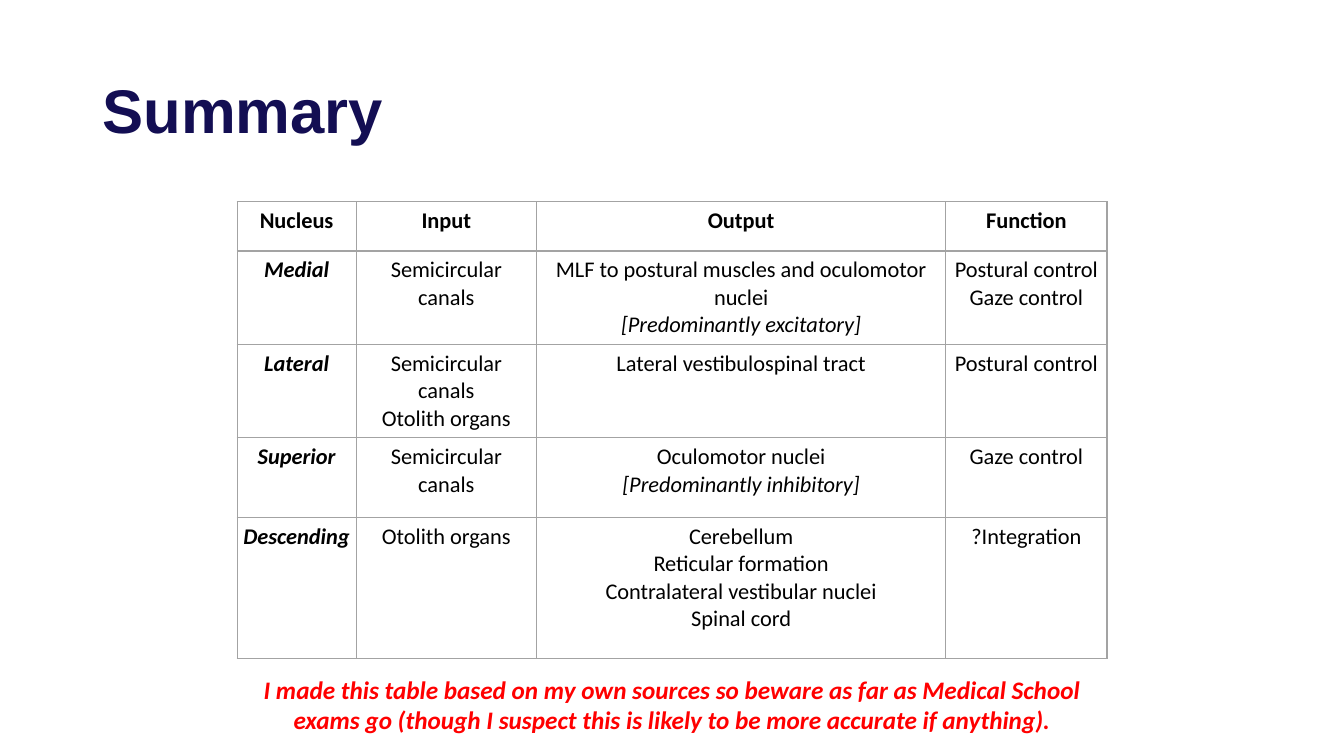
import pptx
import pptx.dml.color
import pptx.enum.text
import pptx.oxml
import pptx.oxml.ns
import pptx.util
from pptx.util import Pt

ALIGN = pptx.enum.text.PP_ALIGN
LEFT, WIDTH = 169.4, 621.4
CELL_MARGIN = 4
COLUMN_WIDTHS = [85, 128.9, 292.3, 115.2]
ROW_HEIGHTS = [35.3, 56.9, 56.9, 56.9, 100.8]
NUCLEI = [
    ["Nucleus", "Input", "Output", "Function"],
    ["Medial", "Semicircular canals",
     "MLF to postural muscles and oculomotor nuclei\n[Predominantly excitatory]",
     "Postural control\nGaze control"],
    ["Lateral", "Semicircular canals\nOtolith organs",
     "Lateral vestibulospinal tract", "Postural control"],
    ["Superior", "Semicircular canals",
     "Oculomotor nuclei\n[Predominantly inhibitory]", "Gaze control"],
    ["Descending", "Otolith organs",
     "Cerebellum\nReticular formation\nContralateral vestibular nuclei\nSpinal cord",
     "?Integration"],
]


def colour(value):
    return pptx.dml.color.RGBColor.from_string(value)


def format_para(para, font, size, shade, bold=False, italic=False, align=ALIGN.CENTER):
    para.alignment = align
    for span in para.runs:
        span.font.name = font
        span.font.size = Pt(size)
        span.font.color.rgb = colour(shade)
        span.font.bold = bold
        span.font.italic = italic


def add_borders(cell, shade, width):
    """Draw all four edges; they must precede the fill in the cell properties."""
    properties = cell._tc.get_or_add_tcPr()
    for position, edge in enumerate(["lnL", "lnR", "lnT", "lnB"]):
        line = pptx.oxml.parse_xml(
            f'<a:{edge} {pptx.oxml.ns.nsdecls("a")} w="{Pt(width)}">'
            f'<a:solidFill><a:srgbClr val="{shade}"/></a:solidFill></a:{edge}>')
        properties.insert(position, line)


def add_title(page, text):
    title = page.shapes.title
    title.left, title.top, title.width, title.height = Pt(66), Pt(28.8), Pt(828), Pt(104.4)
    frame = title.text_frame
    frame.text = text
    frame.auto_size = pptx.enum.text.MSO_AUTO_SIZE.NONE
    frame.vertical_anchor = pptx.enum.text.MSO_ANCHOR.MIDDLE
    frame.paragraphs[0].line_spacing = 0.9
    format_para(frame.paragraphs[0], "Arial", 44, "130E53", bold=True, align=ALIGN.LEFT)


def fill_cell(cell, text, is_header, is_name):
    cell.margin_left = cell.margin_right = Pt(CELL_MARGIN)
    cell.margin_top = cell.margin_bottom = Pt(CELL_MARGIN)
    cell.fill.background()
    add_borders(cell, "A3A3A3", 1)
    cell.text_frame.text = text
    for para in cell.text_frame.paragraphs:
        italic = para.text.startswith("[") or (is_name and not is_header)
        format_para(para, "Calibri", 16, "000000", is_header or is_name, italic)


def add_nuclei_table(page):
    frame = page.shapes.add_table(len(ROW_HEIGHTS), len(COLUMN_WIDTHS),
                                  Pt(LEFT), Pt(144), Pt(WIDTH), Pt(sum(ROW_HEIGHTS)))
    table = frame.table
    table.first_row = table.horz_banding = False
    for column, width in zip(table.columns, COLUMN_WIDTHS):
        column.width = Pt(width)
    for row, height in zip(table.rows, ROW_HEIGHTS):
        row.height = Pt(height)
    for r, texts in enumerate(NUCLEI):
        for c, text in enumerate(texts):
            fill_cell(table.cell(r, c), text, r == 0, c == 0)


def add_caveat(page, text):
    box = page.shapes.add_textbox(Pt(LEFT), Pt(478.1), Pt(WIDTH), Pt(51))
    frame = box.text_frame
    frame.word_wrap = True
    frame.auto_size = pptx.enum.text.MSO_AUTO_SIZE.SHAPE_TO_FIT_TEXT
    frame.text = text
    format_para(frame.paragraphs[0], "Calibri", 18, "FF0000", bold=True, italic=True)


def main():
    deck = pptx.Presentation()
    deck.slide_width, deck.slide_height = Pt(960), Pt(540)
    page = deck.slides.add_slide(deck.slide_layouts[5])
    add_title(page, "Summary")
    add_nuclei_table(page)
    add_caveat(page, "I made this table based on my own sources so beware as far as "
                     "Medical School exams go (though I suspect this is likely to be "
                     "more accurate if anything).")
    deck.save("out.pptx")


if __name__ == "__main__":
    main()
